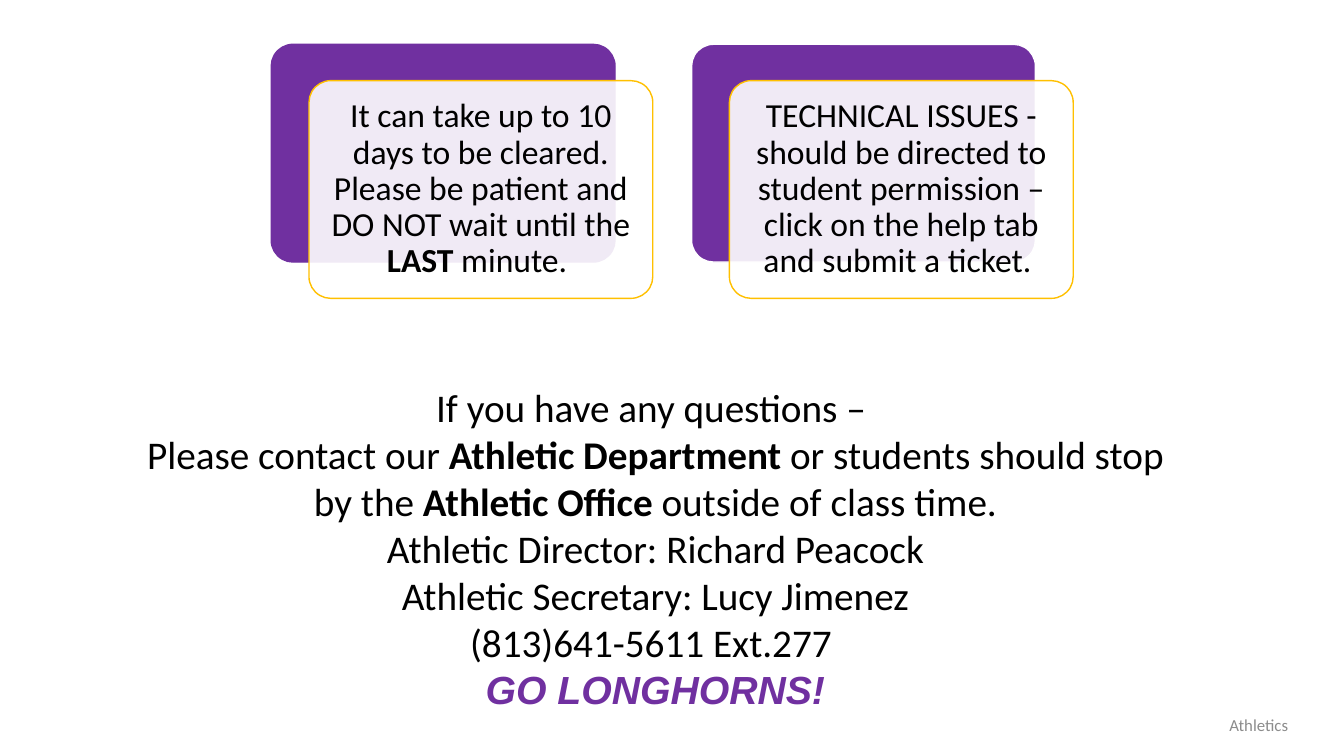
from dataclasses import dataclass

from lxml import etree
from pptx import Presentation, util as u
from pptx.dml.color import RGBColor
from pptx.enum import shapes, text
from pptx.oxml.ns import qn


@dataclass(frozen=True)
class Theme:
    purple: str = "7030A0"
    gold: str = "FFC000"
    white: str = "FFFFFF"
    black: str = "000000"
    gray: str = "8C8C8C"
    font: str = "Calibri"
    cheer: str = "Arial"
    body: int = 28
    card: int = 24
    foot: int = 12


T = Theme()
WIDE, HIGH = u.Inches(13.33), u.Inches(7.5)

# Card layout, in percent of the slide's width and height
LEFTS, TOP = (20.18, 51.46), 5.87
CARD_W, CARD_H = 25.58, 28.8
STEP_X, STEP_Y = 2.81, 4.8
PAD_X, PAD_Y = 0.5, 0.8

# Each paragraph is a list of runs; a run in ** is bold
CARDS = [
    ["It can take up to 10 days to be cleared. Please be patient and "
     "DO NOT wait until the ", "**LAST", " minute. "],
    ["TECHNICAL ISSUES - should be directed to student permission – "
     "click on the help tab and submit a ticket. "],
]
CONTACT = [
    ["If you have any questions – "],
    ["Please contact our ", "**Athletic Department ",
     "or students should stop by the ", "**Athletic Office ",
     "outside of class time."],
    ["Athletic Director: Richard Peacock"],
    ["Athletic Secretary: Lucy Jimenez"],
    ["(813)641-5611 Ext.277 "],
    ["**GO LONGHORNS!"],
]


def share(x, y, w, h):
    """Turn percent of the slide into lengths."""
    return [int(side * part / 100)
            for side, part in zip((WIDE, HIGH, WIDE, HIGH), (x, y, w, h))]


def color(name):
    return RGBColor.from_string(name)


def add_panel(slide, box, fill, edge, alpha=None):
    """Rounded panel, with opacity in percent if given."""
    panel = slide.shapes.add_shape(
        shapes.MSO_SHAPE.ROUNDED_RECTANGLE, *share(*box))
    panel.adjustments[0] = 0.1
    panel.shadow.inherit = False
    panel.fill.solid()
    panel.fill.fore_color.rgb = color(fill)
    panel.line.color.rgb = color(edge)
    panel.line.width = u.Pt(1)
    if alpha:
        tint = panel.fill._xPr.find(qn("a:solidFill"))[0]
        etree.SubElement(tint, qn("a:alpha")).set("val", str(alpha * 1000))


def add_text(slide, box, lines, size, ink=T.black, middle=True, pad=None,
             pitch=None):
    """Centred text box of paragraphs; returns its frame."""
    frame = slide.shapes.add_textbox(*share(*box)).text_frame
    frame.word_wrap = True
    if middle:
        frame.vertical_anchor = text.MSO_ANCHOR.MIDDLE
    if pad:
        frame.margin_top = frame.margin_bottom = u.Inches(pad)
        frame.margin_left = frame.margin_right = u.Inches(pad)
    for i, line in enumerate(lines):
        para = frame.add_paragraph() if i else frame.paragraphs[0]
        para.alignment = text.PP_ALIGN.CENTER
        if pitch:
            para.line_spacing = pitch
        for part in line:
            run = para.add_run()
            run.text = part.removeprefix("**")
            run.font.bold = part.startswith("**")
            run.font.name = T.font
            run.font.size = u.Pt(size)
            run.font.color.rgb = color(ink)
    return frame


def add_card(slide, left, edge, runs):
    """Purple back panel, pale front panel and its message."""
    x, y = left + STEP_X, TOP + STEP_Y
    add_panel(slide, (left, TOP, CARD_W, CARD_H), T.purple, edge)
    add_panel(slide, (x, y, CARD_W, CARD_H), T.white, T.gold, alpha=90)
    label = (x + PAD_X, y + PAD_Y, CARD_W - 2 * PAD_X, CARD_H - 2 * PAD_Y)
    add_text(slide, label, [runs], T.card, pad=0.1, pitch=0.9)


def main():
    deck = Presentation()
    deck.slide_width, deck.slide_height = WIDE, HIGH
    slide = deck.slides.add_slide(deck.slide_layouts[6])

    # Footer
    add_text(slide, (90.32, 94.53, 6.68, 2.8), [["Athletics"]], T.foot, T.gray)

    # Contact details and closing cheer
    frame = add_text(slide, (8.63, 50, 80.27, 45.33), CONTACT, T.body,
                     middle=False)
    frame.auto_size = text.MSO_AUTO_SIZE.SHAPE_TO_FIT_TEXT
    cheer = frame.paragraphs[-1].runs[0].font
    cheer.name, cheer.italic = T.cheer, True
    cheer.color.rgb = color(T.purple)

    # Message cards
    for left, edge, runs in zip(LEFTS, (T.purple, T.white), CARDS):
        add_card(slide, left, edge, runs)

    deck.save("out.pptx")


if __name__ == "__main__":
    main()
